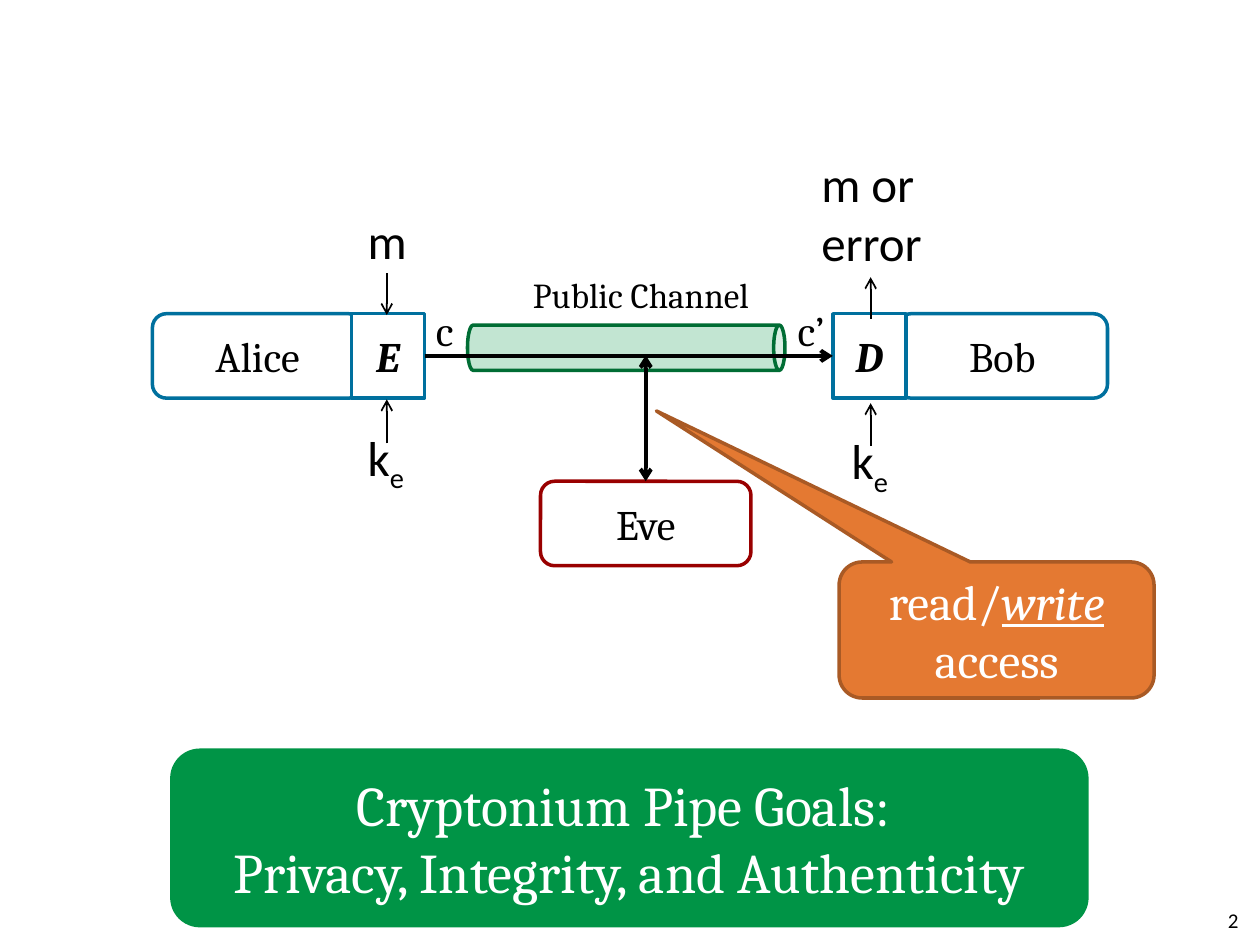
from pptx import Presentation
from pptx.dml.color import RGBColor
from pptx.enum.shapes import MSO_CONNECTOR, MSO_SHAPE as SHAPE
from pptx.enum.text import MSO_ANCHOR as ANCHOR, PP_ALIGN as ALIGN
from pptx.oxml.ns import qn
from pptx.util import Inches, Pt
from lxml.etree import SubElement

COLORS = {
    "black": "000000", "white": "FFFFFF", "green": "009446", "dark_green": "006D34",
    "blue": "00709E", "red": "990000", "orange": "E47932", "brown": "A95A25",
}
BOX_W, BOX_H, KEY_W = 1.67, 0.67, 0.58
ROW_Y, WIRE_Y = 2.49, 2.82
ENC_X, DEC_X = 3.07, 6.91


def rgb(name):
    """Return the named colour."""
    return RGBColor.from_string(COLORS[name])


def add_text(sp, lines, size, font="Cambria", color="black", align=ALIGN.CENTER,
             anchor=ANCHOR.MIDDLE, wrap=True, inset=(0, 0)):
    """Fill a shape with lines, each a list of (text, format) runs."""
    tf = sp.text_frame
    tf.word_wrap = wrap
    tf.vertical_anchor = anchor
    tf.margin_left = tf.margin_right = Inches(inset[0])
    tf.margin_top = tf.margin_bottom = Inches(inset[1])
    p = tf.paragraphs[0]
    p.alignment = align
    for i, line in enumerate(lines):
        if i:
            p.add_line_break()
        for text, style in line:
            r = p.add_run()
            r.text = text
            r.font.name, r.font.size = font, Pt(size)
            r.font.color.rgb = rgb(color)
            r.font.bold = "b" in style
            r.font.italic = "i" in style
            r.font.underline = "u" in style
            if "sub" in style:
                r._r.get_or_add_rPr().set("baseline", "-25000")


def add_box(s, kind, at, fill, line=None):
    """Add a filled preset shape, outlined if a line colour is given."""
    sp = s.shapes.add_shape(kind, *map(Inches, at))
    sp.shadow.inherit = False
    sp.fill.solid()
    sp.fill.fore_color.rgb = rgb(fill)
    if line:
        sp.line.color.rgb = rgb(line)
        sp.line.width = Pt(2)
    else:
        sp.line.fill.background()
    return sp


def add_node(s, x, y, name, line="blue"):
    """Add a rounded box for one party."""
    sp = add_box(s, SHAPE.ROUNDED_RECTANGLE, (x, y, BOX_W, BOX_H), "white", line)
    add_text(sp, [[(name, ())]], 24)
    return sp


def add_cipher(s, x, name):
    """Add a square box for an encryption or decryption step."""
    sp = add_box(s, SHAPE.RECTANGLE, (x, ROW_Y, KEY_W, BOX_H), "white", "blue")
    add_text(sp, [[(name, ("b", "i"))]], 24)
    return sp


def add_label(s, at, lines, size, **style):
    """Add a free-standing label."""
    sp = s.shapes.add_textbox(*map(Inches, at))
    style = {"align": ALIGN.LEFT, "anchor": ANCHOR.TOP, "wrap": False, **style}
    add_text(sp, lines, size, **style)


def add_arrow(s, start, end, width=1, both=False):
    """Add a straight arrow, with a second head if both is set."""
    c = s.shapes.add_connector(MSO_CONNECTOR.STRAIGHT, *map(Inches, (*start, *end)))
    c.line.color.rgb = rgb("black")
    c.line.width = Pt(width)
    ln = c.line._get_or_add_ln()
    for tag in ("a:headEnd", "a:tailEnd") if both else ("a:tailEnd",):
        SubElement(ln, qn(tag)).set("type", "arrow")
    SubElement(c._element.spPr, qn("a:effectLst"))
    return c


def add_pipe(s):
    """Add the translucent public channel."""
    pipe = add_box(s, SHAPE.CAN, (4.79, 1.5, 0.36, 2.52), "green", "dark_green")
    pipe.rotation = 90
    clr = pipe._element.spPr.find(qn("a:solidFill"))[0]
    SubElement(clr, qn("a:alpha")).set("val", "24000")
    add_label(s, (4.23, 2.17, 1.78, 0.34), [[("Public Channel", ())]], 20)


def add_parties(s):
    """Add the parties, their ciphers and the wires between them."""
    add_node(s, 1.21, ROW_Y, "Alice")
    add_node(s, 7.12, ROW_Y, "Bob")
    eve = add_node(s, 4.29, 3.82, "Eve", "red")
    enc, dec = add_cipher(s, 2.79, "E"), add_cipher(s, 6.61, "D")
    wire = add_arrow(s, (3.37, WIRE_Y), (6.61, WIRE_Y), 2.25)
    wire.begin_connect(enc, 3)
    wire.end_connect(dec, 1)
    tap = add_arrow(s, (5.12, 3.82), (5.12, WIRE_Y), 2.25, both=True)
    tap.begin_connect(eve, 0)
    tap.end_x = tap.begin_x
    add_label(s, (3.46, 2.42, 0.15, 0.4), [[("c", ())]], 24)
    add_label(s, (6.33, 2.42, 0.23, 0.4), [[("c’", ())]], 24)


def add_inputs(s):
    """Add the messages and keys going in and out of the ciphers."""
    style = {"font": "Calibri", "inset": (0.1, 0.05)}
    add_label(s, (2.82, 1.62, 0.5, 0.5), [[("m", ())]], 28, **style)
    add_label(s, (6.42, 1.17, 1, 1), [[("m or", ())], [("error", ())]], 28, **style)
    for x, y in ((2.82, 3.34), (6.66, 3.37)):
        add_label(s, (x, y, 0.51, 0.57), [[("k", ()), ("e", ("sub",))]], 28, **style)
    for x, y1, y2 in ((ENC_X, 2.17, 2.5), (ENC_X, 3.52, 3.17),
                      (DEC_X, 2.53, 2.2), (DEC_X, 3.54, 3.2)):
        add_arrow(s, (x, y1), (x, y2))


def add_callout(s):
    """Add the callout about Eve's access."""
    sp = add_box(s, SHAPE.ROUNDED_RECTANGULAR_CALLOUT, (6.66, 4.46, 2.5, 1.08),
                 "orange", "brown")
    for i, value in enumerate((-1.08, -1.61, 0.17)):
        sp.adjustments[i] = value
    runs = [("read/", ()), ("write", ("i", "u")), (" access", ())]
    add_text(sp, [runs], 28, color="white", inset=(0.1, 0.05))


def main():
    """Build the slide and save it."""
    prs = Presentation()
    prs.slide_width, prs.slide_height = Inches(10), Inches(7.5)
    s = prs.slides.add_slide(prs.slide_layouts[6])
    goals = add_box(s, SHAPE.ROUNDED_RECTANGLE, (1.35, 5.94, 7.29, 1.42), "green")
    add_text(goals, [[("Cryptonium Pipe Goals: ", ())],
                     [("Privacy, Integrity, and Authenticity", ())]], 32, color="white")
    add_label(s, (7.5, 7.1, 2.33, 0.4), [[("2", ())]], 12, font="Calibri",
              align=ALIGN.RIGHT, anchor=ANCHOR.MIDDLE, wrap=True)
    add_pipe(s)
    add_parties(s)
    add_inputs(s)
    add_callout(s)
    prs.save("out.pptx")


if __name__ == "__main__":
    main()
